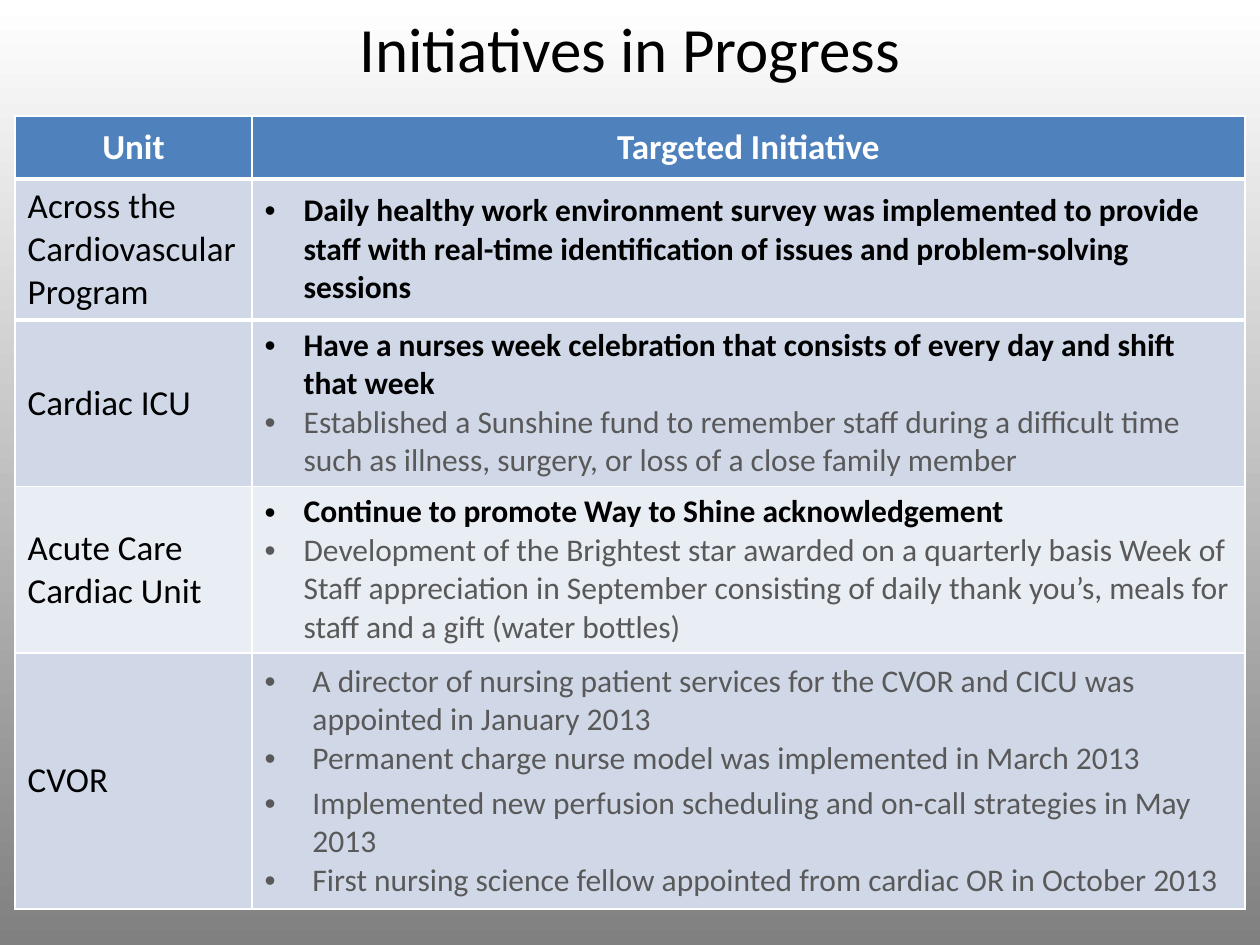
from lxml import etree
from pptx import Presentation
from pptx.dml.color import RGBColor
from pptx.enum import text
from pptx.oxml import ns
from pptx.util import Inches, Pt

# Content: unit, band, bullet indent, then (initiative, is_bold, space before)
TITLE = "Initiatives in Progress"
HEADINGS = ("Unit", "Targeted Initiative")
UNITS = [
    ("Across the Cardiovascular Program", "dark", 0.31, [
        ("Daily healthy work environment survey was implemented to provide staff with "
         "real-time identification of issues and problem-solving sessions", True, 0),
    ]),
    ("Cardiac ICU", "dark", 0.31, [
        ("Have a nurses week celebration that consists of every day and shift that week", True, 0),
        ("Established a Sunshine fund to remember staff during a difficult time such as "
         "illness, surgery, or loss of a close family member", False, 0),
    ]),
    ("Acute Care Cardiac Unit", "light", 0.31, [
        ("Continue to promote Way to Shine acknowledgement", True, 0),
        ("Development of the Brightest star awarded on a quarterly basis Week of Staff "
         "appreciation in September consisting of daily thank you’s, meals for staff and "
         "a gift (water bottles)", False, 0),
    ]),
    ("CVOR", "dark", 0.38, [
        ("A director of nursing patient services for the CVOR and CICU was appointed in "
         "January 2013", False, 0),
        ("Permanent charge nurse model was implemented in March 2013", False, 0),
        ("Implemented new perfusion scheduling and on-call strategies in May 2013", False, 3.7),
        ("First nursing science fellow appointed from cardiac OR in October 2013", False, 0),
    ]),
]

THEME = {
    "font": "Calibri",
    "title": 36, "unit": 20, "item": 18,
    "black": "000000", "white": "FFFFFF", "grey": "595959",
    "head": "4F81BD", "dark": "D0D8E8", "light": "E9EDF4",
    "backdrop": ("FFFFFF", "808080"),
}
COLUMNS = (1.88, 7.88)
ROWS = (0.5, 1.12, 1.32, 1.32, 2.03)
THICK_EDGES = (1, 2)  # row boundaries drawn with the heavy rule


def color(name):
    return RGBColor.from_string(THEME[name])


def write(para, words, size="item", ink="black", bold=False, align=None,
          indent=0, before=0, spacing=None):
    if indent:
        props = para._p.get_or_add_pPr()
        props.set("marL", str(Inches(indent)))
        props.set("indent", str(-Inches(indent)))
        etree.SubElement(props, ns.qn("a:buFont")).set("typeface", "Arial")
        etree.SubElement(props, ns.qn("a:buChar")).set("char", "•")
    if align is not None:
        para.alignment = align
    if before:
        para.space_before = Pt(before)
    if spacing:
        para.line_spacing = spacing
    span = para.add_run()
    span.text = words
    span.font.name = THEME["font"]
    span.font.size = Pt(THEME[size])
    span.font.bold = bold
    span.font.color.rgb = color(ink)


def style_cell(cell, row, fill):
    widths = {"L": 1, "R": 1,
              "T": 3 if row in THICK_EDGES else 1,
              "B": 3 if row + 1 in THICK_EDGES else 1}
    props = cell._tc.get_or_add_tcPr()
    for side, width in widths.items():
        line = etree.SubElement(props, ns.qn(f"a:ln{side}"), w=str(Pt(width)))
        solid = etree.SubElement(line, ns.qn("a:solidFill"))
        etree.SubElement(solid, ns.qn("a:srgbClr"), val=THEME["white"])
    cell.fill.solid()
    cell.fill.fore_color.rgb = color(fill)
    cell.vertical_anchor = text.MSO_ANCHOR.MIDDLE


def main():
    deck = Presentation()
    deck.slide_width, deck.slide_height = Inches(10), Inches(7.5)
    page = deck.slides.add_slide(deck.slide_layouts[5])

    # Background fading downwards
    backdrop = page.background.fill
    backdrop.gradient()
    backdrop.gradient_angle = 270
    for stop, shade in zip(backdrop.gradient_stops, THEME["backdrop"]):
        stop.color.rgb = RGBColor.from_string(shade)

    # Title
    box = page.shapes.title
    box.left, box.top, box.width, box.height = map(Inches, (0.5, 0.08, 9, 0.67))
    box.text_frame.auto_size = text.MSO_AUTO_SIZE.NONE
    box.text_frame.vertical_anchor = text.MSO_ANCHOR.MIDDLE
    write(box.text_frame.paragraphs[0], TITLE, size="title",
          align=text.PP_ALIGN.CENTER, spacing=0.9)

    # Table grid
    table = page.shapes.add_table(
        len(ROWS), len(COLUMNS), Inches(0.12), Inches(0.92),
        Inches(sum(COLUMNS)), Inches(sum(ROWS))).table
    for column, width in zip(table.columns, COLUMNS):
        column.width = Inches(width)
    for row, height in zip(table.rows, ROWS):
        row.height = Inches(height)

    # Heading row
    for index, heading in enumerate(HEADINGS):
        cell = table.cell(0, index)
        style_cell(cell, 0, "head")
        write(cell.text_frame.paragraphs[0], heading, size="unit", ink="white",
              bold=True, align=text.PP_ALIGN.CENTER)

    # One row per unit
    for row, (unit, band, indent, items) in enumerate(UNITS, start=1):
        name_cell, list_cell = table.cell(row, 0), table.cell(row, 1)
        for cell in (name_cell, list_cell):
            style_cell(cell, row, band)
        write(name_cell.text_frame.paragraphs[0], unit, size="unit")
        frame = list_cell.text_frame
        for index, (item, bold, before) in enumerate(items):
            para = frame.add_paragraph() if index else frame.paragraphs[0]
            write(para, item, ink="black" if bold else "grey", bold=bold,
                  indent=indent, before=before)

    deck.save("out.pptx")


if __name__ == "__main__":
    main()
